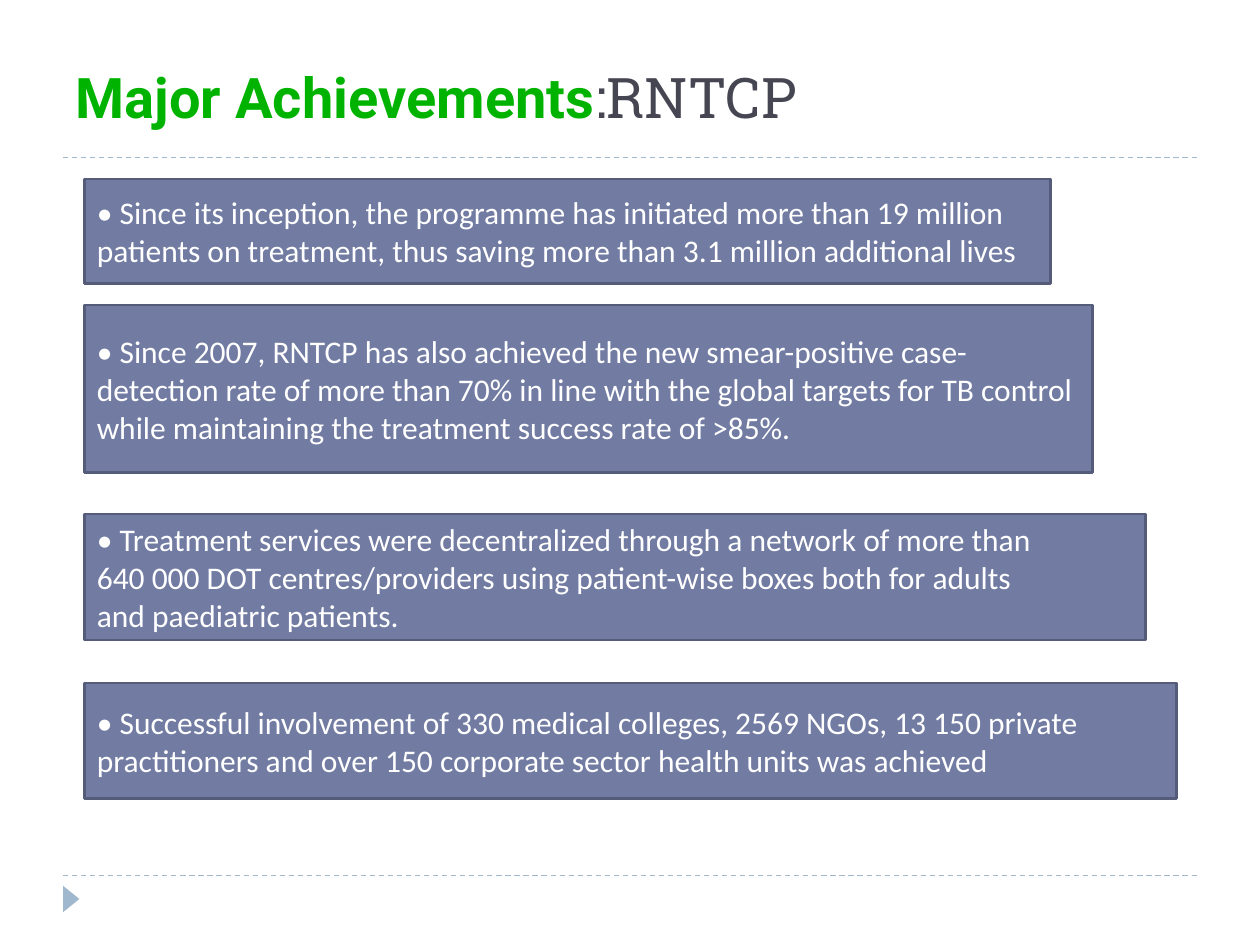
import dataclasses

import pptx
import pptx.util
import pptx.dml.color
import pptx.enum.dml
import pptx.enum.shapes
import pptx.enum.text
import pptx.oxml.ns
from lxml import etree

Inches = pptx.util.Inches
Pt = pptx.util.Pt
Shape = pptx.enum.shapes.MSO_SHAPE
Anchor = pptx.enum.text.MSO_ANCHOR
Align = pptx.enum.text.PP_ALIGN


@dataclasses.dataclass(frozen=True)
class Theme:
    green: str = "00B300"
    dark: str = "464653"
    fill: str = "727CA3"
    edge: str = "545C79"
    rule: str = "9FB8CD"
    white: str = "FFFFFF"
    head: int = 32
    body: int = 18
    sans: str = "Roboto"
    slab: str = "Roboto Slab"
    text: str = "Calibri"


THEME = Theme()

CARDS = [
    (1.42, 7.67, 0.83, [
        "• Since its inception, the programme has initiated more than 19 million",
        "patients on treatment, thus saving more than 3.1 million additional lives",
    ]),
    (2.42, 8, 1.33, [
        "• Since 2007, RNTCP has also achieved the new smear-positive "
        "case-detection rate of more than 70% in line with the global targets "
        "for TB control while maintaining the treatment success rate of >85%.",
    ]),
    (4.08, 8.42, 1, [
        "• Treatment services were decentralized through a network of more than",
        "640 000 DOT centres/providers using patient-wise boxes both for adults",
        "and paediatric patients.",
    ]),
    (5.42, 8.67, 0.92, [
        "• Successful involvement of 330 medical colleges, 2569 NGOs, 13 150 private",
        "practitioners and over 150 corporate sector health units was achieved",
    ]),
]


def color(code):
    return pptx.dml.color.RGBColor.from_string(code)


def write(para, text, *, font, size, tint, bold=False):
    run = para.add_run()
    run.text = text
    run.font.name = font
    run.font.size = Pt(size)
    run.font.bold = bold
    run.font.color.rgb = color(tint)
    para.alignment = Align.LEFT


def title(slide, left, top, width, height):
    head = slide.shapes.title
    head.left, head.top = Inches(left), Inches(top)
    head.width, head.height = Inches(width), Inches(height)
    frame = head.text_frame
    frame.word_wrap = True
    frame.vertical_anchor = Anchor.BOTTOM
    para = frame.paragraphs[0]
    write(para, "Major Achievements", font=THEME.sans, size=THEME.head,
          tint=THEME.green, bold=True)
    write(para, ":RNTCP", font=THEME.slab, size=THEME.head, tint=THEME.dark)


def rule(slide, left, top, width):
    line = slide.shapes.add_connector(
        pptx.enum.shapes.MSO_CONNECTOR.STRAIGHT,
        Inches(left), Inches(top), Inches(left + width), Inches(top))
    line.line.color.rgb = color(THEME.rule)
    line.line.width = Pt(0.75)
    line.line.dash_style = pptx.enum.dml.MSO_LINE.DASH
    etree.SubElement(line._element.spPr, pptx.oxml.ns.qn("a:effectLst"))


def block(slide, kind, left, top, width, height, fill):
    shape = slide.shapes.add_shape(
        kind, Inches(left), Inches(top), Inches(width), Inches(height))
    shape.shadow.inherit = False
    shape.fill.solid()
    shape.fill.fore_color.rgb = color(fill)
    return shape


def marker(slide, left, top, width, height):
    mark = block(slide, Shape.ISOSCELES_TRIANGLE, left, top, width, height,
                 THEME.rule)
    mark.line.fill.background()
    mark.rotation = 90


def card(slide, left, top, width, height, lines):
    box = block(slide, Shape.RECTANGLE, left, top, width, height, THEME.fill)
    box.line.color.rgb = color(THEME.edge)
    box.line.width = Pt(1.5)
    frame = box.text_frame
    frame.word_wrap = True
    frame.vertical_anchor = Anchor.MIDDLE
    for index, text in enumerate(lines):
        para = frame.add_paragraph() if index else frame.paragraphs[0]
        write(para, text, font=THEME.text, size=THEME.body, tint=THEME.white)


def main():
    deck = pptx.Presentation()
    deck.slide_width, deck.slide_height = Inches(10), Inches(7.5)
    slide = deck.slides.add_slide(deck.slide_layouts.get_by_name("Title Only"))
    for top in (6.95, 1.25):
        rule(slide, 0.5, top, 9)
    marker(slide, 0.46, 7.07, 0.21, 0.13)
    title(slide, 0.5, 0, 9, 1.08)
    for top, width, height, lines in CARDS:
        card(slide, 0.67, top, width, height, lines)
    deck.save("out.pptx")


if __name__ == "__main__":
    main()
